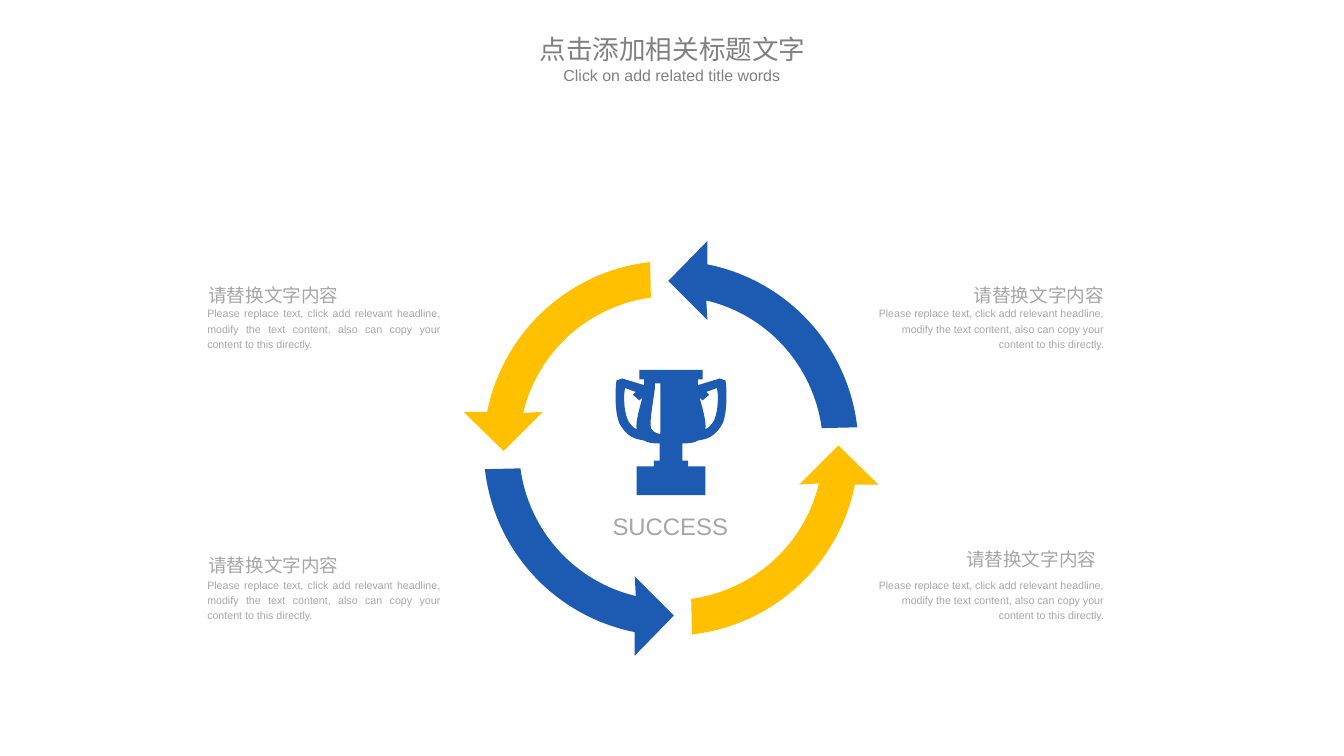
from math import cos, radians, sin, tan

from pptx import Presentation, util as u
from pptx.dml.color import RGBColor
from pptx.enum import text
from pptx.oxml import ns, xmlchemy

SLIDE_SIZE = 14.06, 7.91
CENTER = 7.02, 4.69
BLUE, YELLOW, LIGHT, GRAY = "1D5BB3", "FFC000", "A6A6A6", "808080"
LEFT, CENTERED, RIGHT, JUSTIFIED = (
    text.PP_ALIGN.LEFT, text.PP_ALIGN.CENTER, text.PP_ALIGN.RIGHT, text.PP_ALIGN.JUSTIFY)
CONTROL = "control"

TITLES = [
    ("点击添加相关标题文字", (5.36, 0.29, 3.35, 0.41), 20, "Noto Sans CJK SC", 4),
    ("Click on add related title words", (5.76, 0.64, 2.54, 0.41), 12, "Arial", 2.4),
]
HEADING = "请替换文字内容"
BODY = ("Please replace text, click add relevant headline, modify the text content, "
        "also can copy your content to this directly.")
HEADING_SIZE, BODY_HEIGHT = (1.58, 0.36), 0.57
BODY_COLUMNS = {"left": (2.07, 2.64, JUSTIFIED), "right": (9.08, 2.57, RIGHT)}
BLOCKS = [
    ("left", (2.08, 2.88), 3.14),
    ("left", (2.08, 5.7), 5.98),
    ("right", (9.99, 5.64), 5.98),
    ("right", (10.07, 2.88), 3.14),
]

ARROW_COLORS = [BLUE, YELLOW, BLUE, YELLOW]
ARROW_TILT = 44.8
OUTER_RADIUS, INNER_RADIUS = 1.96, 1.59
OUTER_ANGLES, INNER_ANGLES = (11.2, 83.6), (82.4, 13.4)
ARROW_HEAD = [(0.38, -1.34), (-0.03, -1.75), (0.38, -2.17)]

CUP_HALF = [
    (-0.33, -0.82), (-0.33, -0.72), (-0.28, -0.72), (-0.28, -0.66), (-0.51, -0.73),
    (-0.57, -0.71), (-0.58, -0.66, CONTROL), (-0.58, -0.59, CONTROL), (-0.58, -0.53),
    (-0.58, -0.44, CONTROL), (-0.57, -0.33, CONTROL), (-0.54, -0.26),
    (-0.49, -0.17, CONTROL), (-0.43, -0.11, CONTROL), (-0.33, -0.09), (-0.28, -0.08),
    (-0.25, -0.06, CONTROL), (-0.2, -0.05, CONTROL), (-0.12, -0.05), (-0.12, 0.13),
    (-0.18, 0.13), (-0.18, 0.19), (-0.36, 0.19), (-0.36, 0.49),
]
HANDLE_HOLE = [
    (-0.3, -0.53), (-0.33, -0.41, CONTROL), (-0.37, -0.29, CONTROL), (-0.36, -0.2),
    (-0.39, -0.21, CONTROL), (-0.42, -0.24, CONTROL), (-0.45, -0.29),
    (-0.48, -0.36, CONTROL), (-0.49, -0.44, CONTROL), (-0.49, -0.53),
    (-0.49, -0.56, CONTROL), (-0.49, -0.6, CONTROL), (-0.48, -0.63),
    (-0.37, -0.59), (-0.4, -0.56), (-0.33, -0.5),
]
CUP_SHINE = [
    (-0.11, -0.68), (-0.11, -0.15), (-0.11, -0.15, CONTROL), (-0.18, -0.15, CONTROL),
    (-0.21, -0.21), (-0.23, -0.27, CONTROL), (-0.17, -0.59, CONTROL), (-0.17, -0.62),
    (-0.17, -0.68),
]


def color(value):
    """Turn a hex string into a colour."""
    return RGBColor.from_string(value)


def rotate(points, degrees):
    """Rotate points clockwise about the origin, keeping their marks."""
    c, s = cos(radians(degrees)), sin(radians(degrees))
    return [(x * c - y * s, x * s + y * c, *mark) for x, y, *mark in points]


def mirror(points):
    """Reflect points in the vertical axis, in reverse order."""
    return [(-x, y, *mark) for x, y, *mark in reversed(points)]


def arc(radius, angles):
    """Make two curves between two angles measured from the top."""
    start, end = angles
    step = (end - start) / 2
    reach = radius * 4 / 3 * tan(radians(step) / 4)
    curve = [(-reach, -radius, CONTROL), (0, -radius), (reach, -radius, CONTROL)]
    points = [point for part in range(3) for point in rotate(curve, start + part * step)]
    return points[1:-1]


def bend(shape, contours):
    """Join marked control points and the points after them into curves."""
    outline = shape.element.find(".//" + ns.qn("a:path"))
    marks = [mark for contour in contours for mark in [*contour, ()]]
    curve = None
    for node, mark in zip(list(outline), marks):
        is_control = CONTROL in mark
        if is_control and curve is None:
            curve = xmlchemy.OxmlElement("a:cubicBezTo")
            node.addprevious(curve)
        if curve is not None:
            curve.append(node[0])
            outline.remove(node)
        if not is_control:
            curve = None


def add_outline(shapes, contours, fill, tilt=0):
    """Draw closed contours around the centre of the ring, tilted about their own centre."""
    contours = [rotate(contour, -tilt) for contour in contours]
    columns, rows = zip(*[point[:2] for contour in contours for point in contour])
    middle = (min(columns) + max(columns)) / 2, (min(rows) + max(rows)) / 2
    origin = [c + t - m for c, t, m in zip(CENTER, rotate([middle], tilt)[0], middle)]

    scaled = [[(point[0] * 1000, point[1] * 1000) for point in contour] for contour in contours]
    builder = shapes.build_freeform(*scaled[0][0], scale=u.Inches(1) / 1000)
    builder.add_line_segments(scaled[0][1:], close=True)
    for contour in scaled[1:]:
        builder.move_to(*contour[0])
        builder.add_line_segments(contour[1:], close=True)
    shape = builder.convert_to_shape(*map(u.Inches, origin))
    bend(shape, contours)
    shape.rotation = tilt
    shape.shadow.inherit = False
    shape.fill.solid()
    shape.fill.fore_color.rgb = color(fill)
    shape.line.fill.background()


def add_label(shapes, words, box, size, align, wrap=True, font="Arial", tone=LIGHT):
    """Add a one-paragraph text box and return its paragraph."""
    frame = shapes.add_textbox(*map(u.Inches, box)).text_frame
    frame.text = words
    frame.word_wrap = wrap
    paragraph = frame.paragraphs[0]
    paragraph.alignment = align
    style = paragraph.runs[0].font
    style.name, style.size = font, u.Pt(size)
    style.color.rgb = color(tone)
    return paragraph


def main():
    """Build the slide and save it."""
    presentation = Presentation()
    presentation.slide_width, presentation.slide_height = map(u.Inches, SLIDE_SIZE)
    shapes = presentation.slides.add_slide(presentation.slide_layouts[6]).shapes

    arrow = arc(OUTER_RADIUS, OUTER_ANGLES) + arc(INNER_RADIUS, INNER_ANGLES) + ARROW_HEAD
    ring = shapes.add_group_shape().shapes
    for turn, fill in enumerate(ARROW_COLORS):
        add_outline(ring, [rotate(arrow, 90 * turn)], fill, ARROW_TILT)
    trophy = [CUP_HALF + mirror(CUP_HALF), HANDLE_HOLE, mirror(HANDLE_HOLE), CUP_SHINE]
    add_outline(shapes, trophy, BLUE)

    success = add_label(shapes, "SUCCESS", (6.31, 5.24, 1.42, 0.43), 18, JUSTIFIED, wrap=False)
    success.line_spacing = 1.2
    for side, corner, body_top in BLOCKS:
        left, width, align = BODY_COLUMNS[side]
        heading_align = LEFT if side == "left" else RIGHT
        block = shapes.add_group_shape().shapes
        heading = add_label(block, HEADING, corner + HEADING_SIZE, 14, heading_align, wrap=False)
        body = add_label(block, BODY, (left, body_top, width, BODY_HEIGHT), 8, align)
        heading.line_spacing = body.line_spacing = 1.2

    for words, box, size, font, gap in TITLES:
        title = add_label(shapes, words, box, size, CENTERED, font=font, tone=GRAY)
        title.space_before, title.space_after = u.Pt(gap), u.Pt(6)

    presentation.save("out.pptx")


if __name__ == "__main__":
    main()
